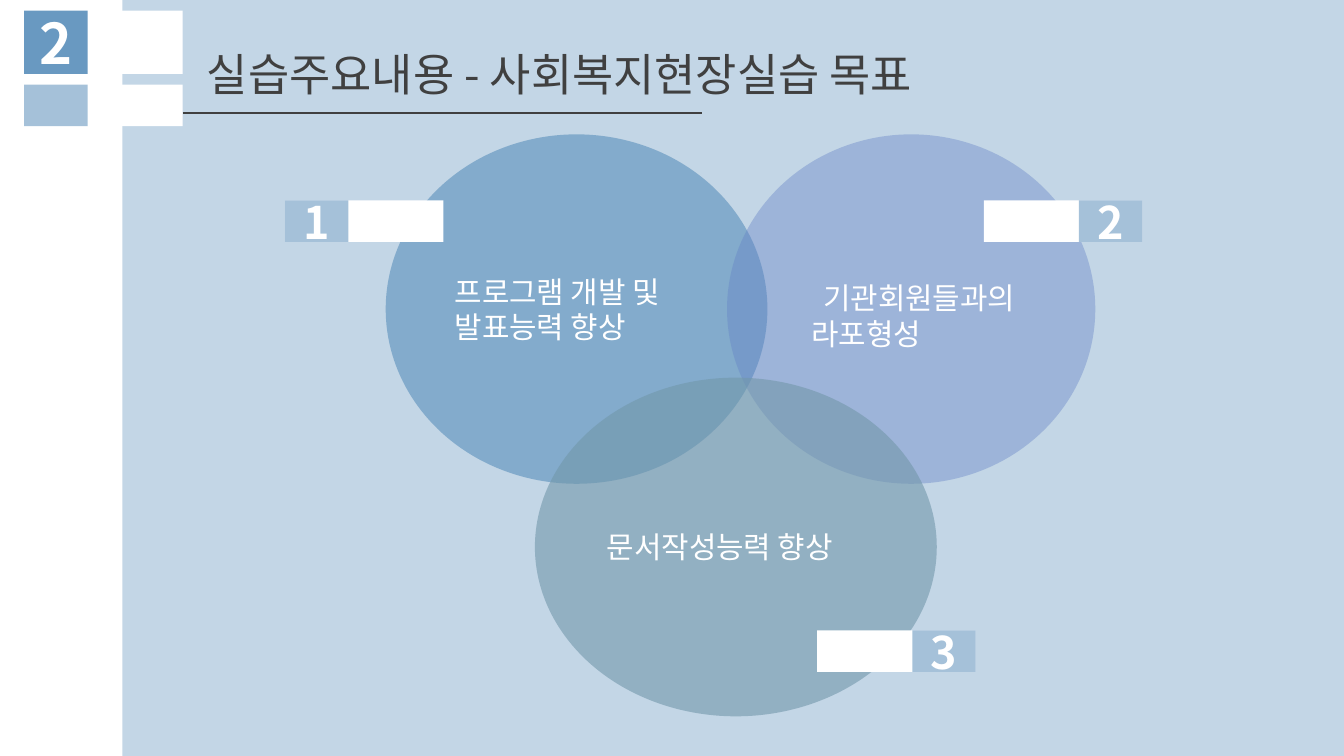
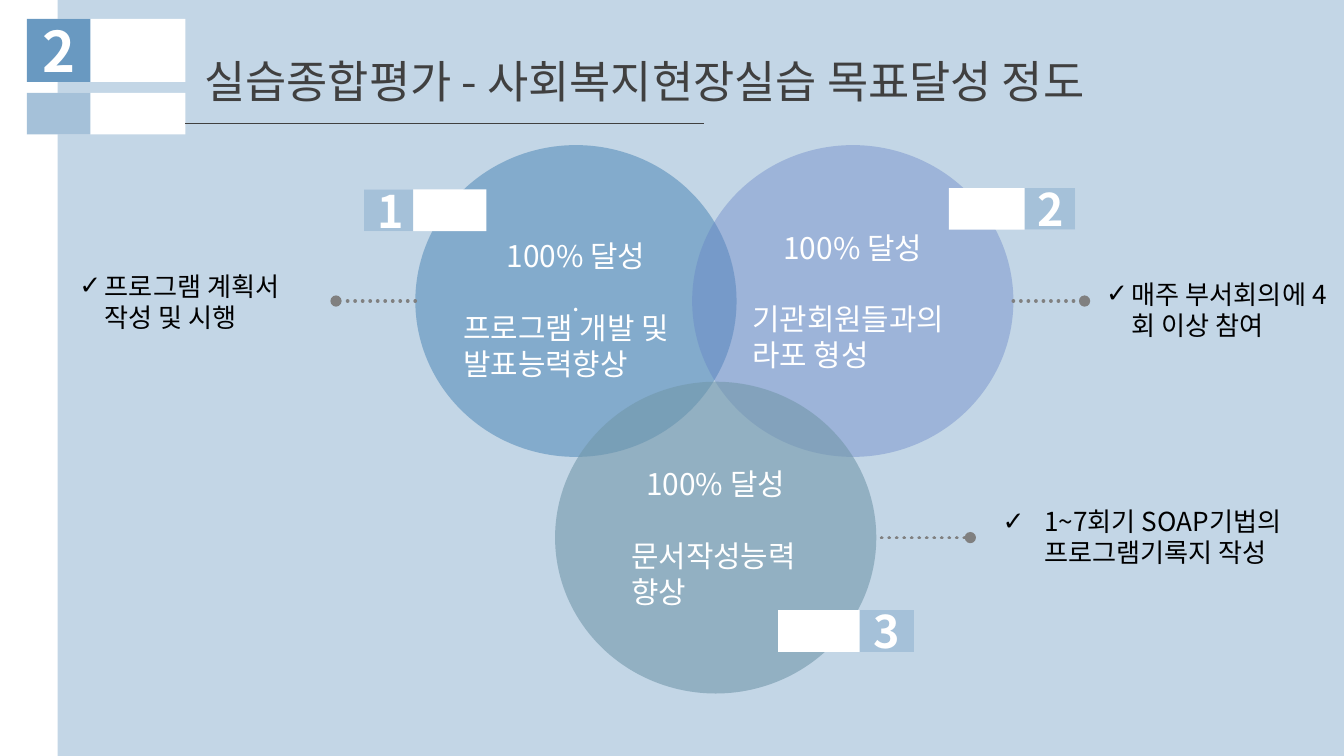
"""Build two slides on the goals of a social work placement and how far they were met."""
from dataclasses import dataclass
from typing import Any

import pptx
import pptx.dml.color
import pptx.enum.dml
import pptx.enum.shapes
import pptx.enum.text
import pptx.oxml
import pptx.oxml.ns
import pptx.util
from lxml import etree

Inches = pptx.util.Inches
Pt = pptx.util.Pt
qn = pptx.oxml.ns.qn
Shape = pptx.enum.shapes.MSO_SHAPE
Align = pptx.enum.text.PP_ALIGN
Anchor = pptx.enum.text.MSO_ANCHOR

FONT = "Noto Sans CJK KR"
WIDTH = 10
HEIGHT = WIDTH * 9 / 16
COLORS = {
    "blue": "6999C1",
    "violet": "6482C6",
    "teal": "7297AA",
    "white": "FFFFFF",
    "ink": "404040",
    "gray": "808080",
    "black": "000000",
}
FORMATS: dict[str, dict[str, Any]] = {
    "title": {"size": Pt(24), "bold": False, "name": FONT},
    "section": {"size": Pt(30), "bold": True, "name": FONT},
    "number": {"size": Pt(24), "bold": True, "name": FONT},
    "goal": {"size": Pt(16), "bold": False, "name": FONT},
    "note": {"size": Pt(14), "bold": False, "name": FONT},
}
FRAME = {
    "word_wrap": True,
    "auto_size": pptx.enum.text.MSO_AUTO_SIZE.NONE,
}


@dataclass(frozen=True)
class Area:
    left: float
    top: float
    width: float
    height: float


@dataclass(frozen=True)
class Para:
    text: str
    align: Any = Align.LEFT
    after: float = 0
    indent: float = 0
    bullet: float = 0


@dataclass(frozen=True)
class Circle:
    area: Area
    color: str
    alpha: int
    paras: tuple[Para, ...] = ()
    style: str = "goal"


@dataclass(frozen=True)
class Tag:
    area: Area
    text: str = ""
    style: str = "number"
    alpha: int = 60
    flipped: bool = False


@dataclass(frozen=True)
class Rule:
    start: float
    end: float
    top: float
    color: str = "gray"
    width: float = 2
    dotted: bool = True


@dataclass(frozen=True)
class Note:
    area: Area
    para: Para


@dataclass(frozen=True)
class Goals:
    layout: int
    band_left: float
    corner: tuple[float, float]
    title: str
    title_area: Area
    underline: Rule
    circles: tuple[Circle, ...]
    tags: tuple[Tag, ...]
    label_area: Area
    label: tuple[Para, ...]
    leaders: tuple[Rule, ...] = ()
    notes: tuple[Note, ...] = ()


def rgb(color: str) -> Any:
    return pptx.dml.color.RGBColor.from_string(COLORS[color])


def inches(area: Area) -> tuple[Any, ...]:
    return tuple(Inches(value) for value in (area.left, area.top, area.width, area.height))


def write(box: Any, paras: tuple[Para, ...], style: str, color: str, anchor: Any = Anchor.TOP) -> None:
    frame = box.text_frame
    for name, value in {**FRAME, "vertical_anchor": anchor}.items():
        setattr(frame, name, value)
    for index, item in enumerate(paras):
        para = frame.add_paragraph() if index else frame.paragraphs[0]
        spacing = {"alignment": item.align, "space_before": Pt(0), "space_after": Pt(item.after)}
        for name, value in spacing.items():
            setattr(para, name, value)
        span = para.add_run()
        span.text = item.text
        span.font.color.rgb = rgb(color)
        for name, value in FORMATS[style].items():
            setattr(span.font, name, value)
        span.font._element.set("kern", "0")
        etree.SubElement(span.font._element, qn("a:ea"), typeface=FONT)
        properties = para._p.get_or_add_pPr()
        properties.set("marL", str(Inches(item.indent)))
        properties.set("indent", str(-Inches(item.bullet)))
        if item.bullet:
            etree.SubElement(properties, qn("a:buChar"), char="✓")


def add_block(shapes: Any, kind: Any, area: Area, color: str, alpha: int = 100) -> Any:
    box = shapes.add_shape(kind, *inches(area))
    box.shadow.inherit = False
    box.line.fill.background()
    box.fill.solid()
    box.fill.fore_color.rgb = rgb(color)
    if alpha < 100:
        tint = next(box.element.spPr.iter(qn("a:srgbClr")))
        etree.SubElement(tint, qn("a:alpha"), val=str(alpha * 1000))
    return box


def add_tag(page: Any, tag: Tag) -> None:
    shapes = page.shapes.add_group_shape().shapes
    area = tag.area
    add_block(shapes, Shape.RECTANGLE, area, "white")
    width = area.width * 0.4
    left = area.left + area.width - width if tag.flipped else area.left
    square = Area(left, area.top, width, area.height)
    box = add_block(shapes, Shape.RECTANGLE, square, "blue", tag.alpha)
    if tag.text:
        write(box, (Para(tag.text, Align.CENTER),), tag.style, "white", Anchor.MIDDLE)


def add_circle(page: Any, circle: Circle) -> None:
    box = add_block(page.shapes, Shape.OVAL, circle.area, circle.color, circle.alpha)
    if circle.paras:
        write(box, circle.paras, circle.style, "white", Anchor.MIDDLE)


def add_rule(page: Any, rule: Rule) -> None:
    line = page.shapes.add_connector(
        pptx.enum.shapes.MSO_CONNECTOR.STRAIGHT,
        Inches(rule.start), Inches(rule.top), Inches(rule.end), Inches(rule.top),
    )
    line.line.color.rgb = rgb(rule.color)
    line.line.width = Pt(rule.width)
    if rule.dotted:
        line.line.dash_style = pptx.enum.dml.MSO_LINE.ROUND_DOT
        line.line._ln.set("cap", "rnd")
        etree.SubElement(line.line._ln, qn("a:tailEnd"), type="oval")
    etree.SubElement(line.element.spPr, qn("a:effectLst"))


def fill_placeholder(box: Any, area: Area, para: Para, style: str, color: str) -> None:
    box.element.getparent().append(box.element)
    for name, value in zip(("left", "top", "width", "height"), inches(area)):
        setattr(box, name, value)
    write(box, (para,), style, color)


def add_goals(deck: Any, goals: Goals) -> None:
    page = deck.slides.add_slide(deck.slide_layouts[goals.layout])
    title, *bodies = list(page.placeholders)
    band = Area(goals.band_left, 0, WIDTH - goals.band_left, HEIGHT)
    add_block(page.shapes, Shape.RECTANGLE, band, "blue", 40)
    left, top = goals.corner
    add_tag(page, Tag(Area(left, top, 1.18, 0.47), "2", "section", 100))
    add_tag(page, Tag(Area(left, top + 0.55, 1.18, 0.31)))
    add_rule(page, goals.underline)
    fill_placeholder(title, goals.title_area, Para(goals.title), "title", "ink")
    for circle in goals.circles:
        add_circle(page, circle)
    for leader in goals.leaders:
        add_rule(page, leader)
    for body, note in zip(bodies, goals.notes):
        fill_placeholder(body, note.area, note.para, "note", "black")
    for body in bodies[len(goals.notes):]:
        body.element.getparent().remove(body.element)
    label = page.shapes.add_textbox(*inches(goals.label_area))
    write(label, goals.label, "goal", "white")
    for tag in goals.tags:
        add_tag(page, tag)


def underline(start: float, top: float) -> Rule:
    return Rule(start, start + 3.86, top, "ink", 0.75, False)


ACHIEVED = Para("100% 달성", Align.CENTER, 19.2)

SLIDES = (
    Goals(
        layout=5,
        band_left=0.91,
        corner=(0.18, 0.08),
        title="실습주요내용 - 사회복지현장실습 목표",
        title_area=Area(1.44, 0.3, 8.56, 0.5),
        underline=underline(1.36, 0.84),
        circles=(
            Circle(Area(2.87, 1, 2.84, 2.6), "blue", 70, (Para("프로그램 개발 및 발표능력 향상"),)),
            Circle(Area(5.41, 1, 2.74, 2.6), "violet", 40),
            Circle(Area(3.98, 2.81, 2.99, 2.52), "teal", 60, (Para("문서작성능력 향상"),)),
        ),
        tags=(
            Tag(Area(2.12, 1.49, 1.18, 0.31), "1"),
            Tag(Area(7.32, 1.49, 1.18, 0.31), "2", flipped=True),
            Tag(Area(6.08, 4.69, 1.18, 0.31), "3", flipped=True),
        ),
        label_area=Area(5.94, 2.03, 1.85, 0.64),
        label=(Para("기관회원들과의 ", Align.CENTER), Para("라포형성")),
    ),
    Goals(
        layout=4,
        band_left=0.43,
        corner=(0.2, 0.14),
        title="실습종합평가 - 사회복지현장실습 목표달성 정도",
        title_area=Area(1.42, 0.35, 8.58, 0.5),
        underline=underline(1.38, 0.92),
        circles=(
            Circle(Area(3.09, 1.08, 2.39, 2.32), "blue", 70, (Para(".", Align.CENTER),), "note"),
            Circle(Area(5.15, 1.08, 2.39, 2.32), "violet", 40, (ACHIEVED, Para("기관회원들과의 라포 형성"))),
            Circle(
                Area(4.13, 2.84, 2.39, 2.32), "teal", 60,
                (ACHIEVED, Para("문서작성능력", indent=0.12), Para("향상", indent=0.12)),
            ),
        ),
        tags=(
            Tag(Area(2.71, 1.41, 0.91, 0.31), "1"),
            Tag(Area(7.06, 1.4, 0.94, 0.31), "2", flipped=True),
            Tag(Area(5.79, 4.54, 1.01, 0.31), "3", flipped=True),
        ),
        label_area=Area(3.35, 1.72, 1.87, 1.18),
        label=(ACHIEVED, Para("프로그램 개발 및 발표능력향상")),
        leaders=(Rule(3.09, 2.5, 2.24), Rule(6.56, 7.22, 4), Rule(7.54, 8.07, 2.24)),
        notes=(
            Note(Area(0.49, 1.96, 1.95, 0.57), Para("프로그램 계획서 작성 및 시행", indent=0.19, bullet=0.19)),
            Note(Area(7.63, 2.02, 2.37, 0.57), Para("매주 부서회의에 4회 이상 참여", indent=0.69, bullet=0.19)),
            Note(
                Area(7.36, 3.71, 2.36, 0.57),
                Para("1~7회기 SOAP기법의 프로그램기록지 작성", indent=0.31, bullet=0.31),
            ),
        ),
    ),
)


def main() -> None:
    deck = pptx.Presentation()
    deck.slide_width, deck.slide_height = Inches(WIDTH), Inches(HEIGHT)
    for goals in SLIDES:
        add_goals(deck, goals)
    deck.save("out.pptx")


if __name__ == "__main__":
    main()
